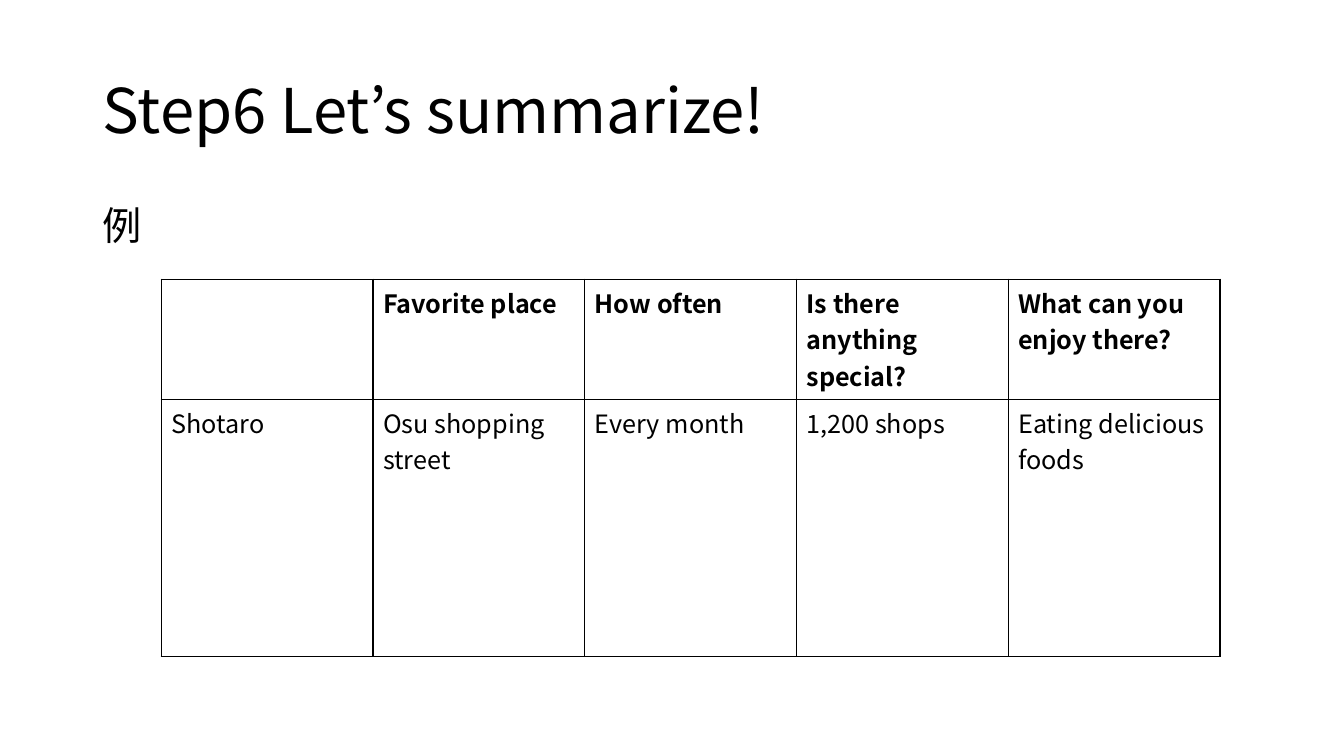
from lxml import etree
from pptx import Presentation
from pptx.dml.color import RGBColor
from pptx.enum import text
from pptx.oxml import ns
from pptx.util import Inches, Pt

BLACK = RGBColor(0x00, 0x00, 0x00)
FONT = "Noto Sans CJK JP"
ROWS = [
    ["", "Favorite place", "How often", "Is there anything special?",
     "What can you enjoy there?"],
    ["Shotaro", "Osu shopping street", "Every month", "1,200 shops",
     "Eating delicious foods"],
]
ROW_HEIGHTS = [1.19, 2.55]
COL_WIDTH = 2.1


def write(tf, content, size, bold=False):
    tf.text = content
    p = tf.paragraphs[0]
    p.alignment = text.PP_ALIGN.LEFT
    for r in p.runs:
        r.font.size = Pt(size)
        r.font.bold = bold
        r.font.color.rgb = BLACK
        r.font.name = FONT
        etree.SubElement(r.font._element, ns.qn("a:ea"), typeface=FONT)
    return p


def add_title(s, content):
    sp = s.shapes.title
    sp.left, sp.top = Inches(0.92), Inches(0.4)
    sp.width, sp.height = Inches(11.5), Inches(1.45)
    tf = sp.text_frame
    tf.auto_size = text.MSO_AUTO_SIZE.NONE
    tf.vertical_anchor = text.MSO_ANCHOR.MIDDLE
    write(tf, content, 44).line_spacing = 0.9


def add_body(s, content):
    sp = s.shapes.add_textbox(Inches(0.92), Inches(2), Inches(11.5), Inches(4.76))
    tf = sp.text_frame
    tf.word_wrap = True
    p = write(tf, content, 28)
    p.line_spacing = 0.9
    p.space_before = Pt(10)


def add_borders(cell):
    tcPr = cell._tc.get_or_add_tcPr()
    for side in ("lnL", "lnR", "lnT", "lnB"):
        ln = etree.SubElement(tcPr, ns.qn(f"a:{side}"), w=str(Pt(1)))
        fill = etree.SubElement(ln, ns.qn("a:solidFill"))
        etree.SubElement(fill, ns.qn("a:srgbClr"), val=str(BLACK))


def add_summary_table(s):
    n_cols = len(ROWS[0])
    frame = s.shapes.add_table(len(ROWS), n_cols, Inches(1.6), Inches(2.77),
                               Inches(COL_WIDTH * n_cols), Inches(sum(ROW_HEIGHTS)))
    table = frame.table
    table.first_row = table.horz_banding = False
    for col in table.columns:
        col.width = Inches(COL_WIDTH)
    for i, (row, height) in enumerate(zip(ROWS, ROW_HEIGHTS)):
        table.rows[i].height = Inches(height)
        for j, content in enumerate(row):
            cell = table.cell(i, j)
            write(cell.text_frame, content, 18, bold=i == 0)
            add_borders(cell)
            cell.fill.background()


def main():
    prs = Presentation()
    prs.slide_width, prs.slide_height = Inches(13.33), Inches(7.5)
    s = prs.slides.add_slide(prs.slide_layouts[5])
    add_title(s, "Step6 Let’s summarize!")
    add_body(s, "例")
    add_summary_table(s)
    prs.save("out.pptx")


if __name__ == "__main__":
    main()
